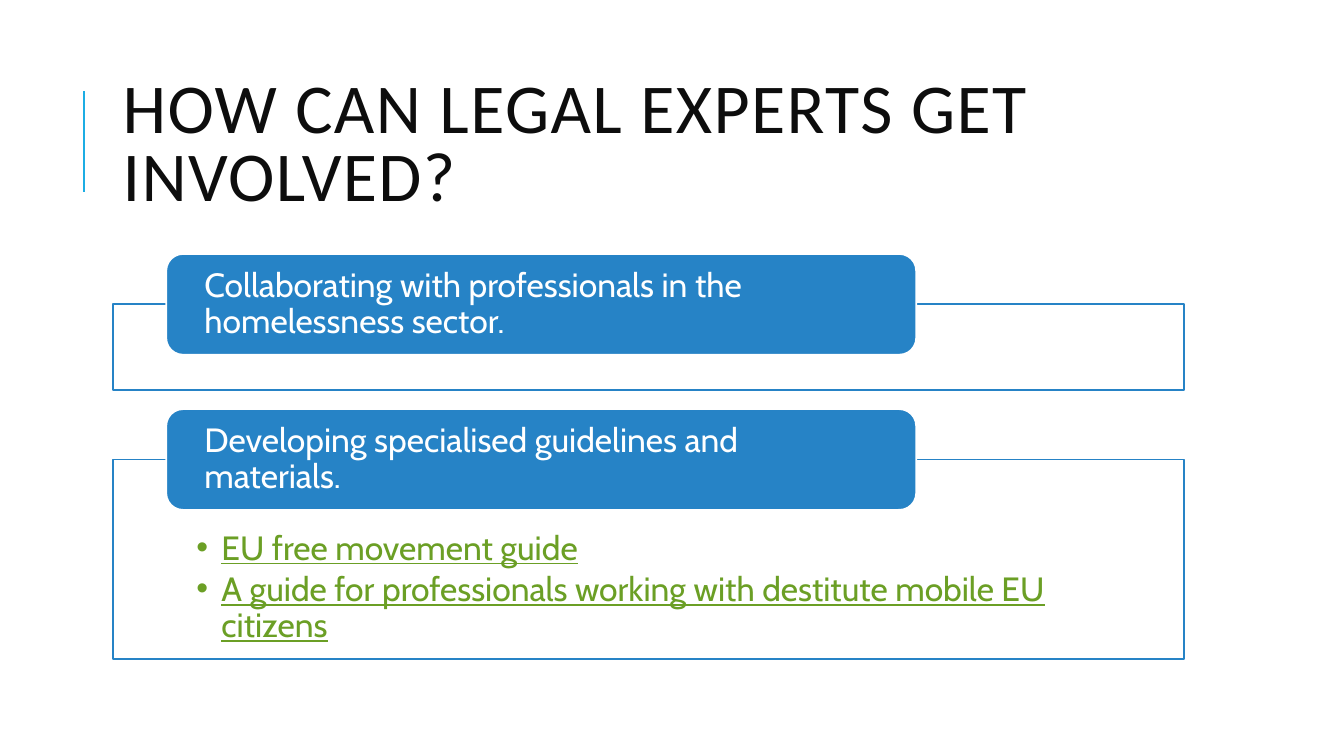
from dataclasses import dataclass

from lxml import etree
from pptx import Presentation
from pptx.dml.color import RGBColor
from pptx.enum.shapes import MSO_CONNECTOR, MSO_SHAPE
from pptx.enum.text import MSO_ANCHOR, MSO_AUTO_SIZE, PP_ALIGN
from pptx.oxml.ns import qn
from pptx.util import Cm, Pt


@dataclass(frozen=True)
class Theme:
    white: RGBColor = RGBColor.from_string("FFFFFF")
    ink: RGBColor = RGBColor.from_string("0D0D0D")
    blue: RGBColor = RGBColor.from_string("2683C6")
    accent: RGBColor = RGBColor.from_string("1CADE4")
    link: RGBColor = RGBColor.from_string("6B9F25")
    title_font: str = "Calibri"
    body_font: str = "Cabin"
    title_size: int = 50
    body_size: int = 24
    outline: float = 1.25


THEME = Theme()


def write_text(shape, lines, color, size=THEME.body_size, font=THEME.body_font,
               insets=(0.25, 0.13, 0.25, 0.13), anchor=MSO_ANCHOR.MIDDLE,
               line_spacing=0.9, space_after=0, tracking=0, underline=None, bullet=None):
    """Insets are left, top, right, bottom in cm; spacing and tracking are in points."""
    frame = shape.text_frame
    frame.text = "\n".join(lines)
    frame.word_wrap = True
    frame.auto_size = MSO_AUTO_SIZE.NONE
    frame.vertical_anchor = anchor
    (frame.margin_left, frame.margin_top,
     frame.margin_right, frame.margin_bottom) = map(Cm, insets)
    for paragraph in frame.paragraphs:
        paragraph.alignment = PP_ALIGN.LEFT
        paragraph.line_spacing = line_spacing
        paragraph.space_before = Pt(0)
        paragraph.space_after = Pt(space_after)
        if bullet:
            properties = paragraph._p.get_or_add_pPr()
            properties.set("marL", str(Cm(0.63)))
            properties.set("indent", str(-Cm(0.63)))
            etree.SubElement(properties, qn("a:buChar"), char=bullet)
        for run in paragraph.runs:
            run.font.name = font
            run.font.size = Pt(size)
            run.font.color.rgb = color
            run.font.underline = underline
            if tracking:
                run.font._element.set("spc", str(tracking * 100))


def paint(shape, fill, line):
    shape.fill.solid()
    shape.fill.fore_color.rgb = fill
    shape.line.color.rgb = line
    shape.line.width = Pt(THEME.outline)


presentation = Presentation()
presentation.slide_width = Cm(33.87)
presentation.slide_height = Cm(19.05)
slide = presentation.slides.add_slide(presentation.slide_layouts[1])
title, guides = slide.placeholders

# Title with its accent line
content_left, content_width = Cm(2.84), Cm(27)
title.left, title.top, title.width, title.height = content_left, Cm(1.63), content_width, Cm(4.17)
write_text(title, ["HOW CAN LEGAL EXPERTS GET INVOLVED?"], THEME.ink,
           size=THEME.title_size, font=THEME.title_font, line_spacing=0.8, tracking=1)

accent_line = slide.shapes.add_connector(
    MSO_CONNECTOR.STRAIGHT, Cm(2.11), Cm(4.83), Cm(2.11), Cm(2.29))
accent_line.line.color.rgb = THEME.accent
accent_line.line.width = Pt(1.5)
etree.SubElement(accent_line._element.spPr, qn("a:effectLst"))

# Framed sections, each with a heading centred on the frame's top edge
collaboration = slide.shapes.add_shape(MSO_SHAPE.RECTANGLE, 0, 0, 0, 0)
collaboration.shadow.inherit = False
heading_height = Cm(2.54)
sections = [
    (collaboration, 7.67, 2.16, "Collaborating with professionals in the homelessness sector."),
    (guides, 11.58, 5.03, "Developing specialised guidelines and materials."),
]
for section, top, height, heading_text in sections:
    section.left, section.top = content_left, Cm(top)
    section.width, section.height = content_width, Cm(height)
    paint(section, THEME.white, THEME.blue)

    heading = slide.shapes.add_shape(
        MSO_SHAPE.ROUNDED_RECTANGLE, Cm(4.19), Cm(top) - heading_height // 2,
        Cm(18.9), heading_height)
    heading.shadow.inherit = False
    paint(heading, THEME.blue, THEME.white)
    write_text(heading, [heading_text], THEME.white, insets=(0.84, 0.13, 0.84, 0.13))

write_text(guides,
           ["EU free movement guide",
            "A guide for professionals working with destitute mobile EU citizens"],
           THEME.link, insets=(2.11, 1.8, 2.11, 0.48), anchor=MSO_ANCHOR.TOP,
           space_after=3.6, underline=True, bullet="•")

presentation.save("out.pptx")
